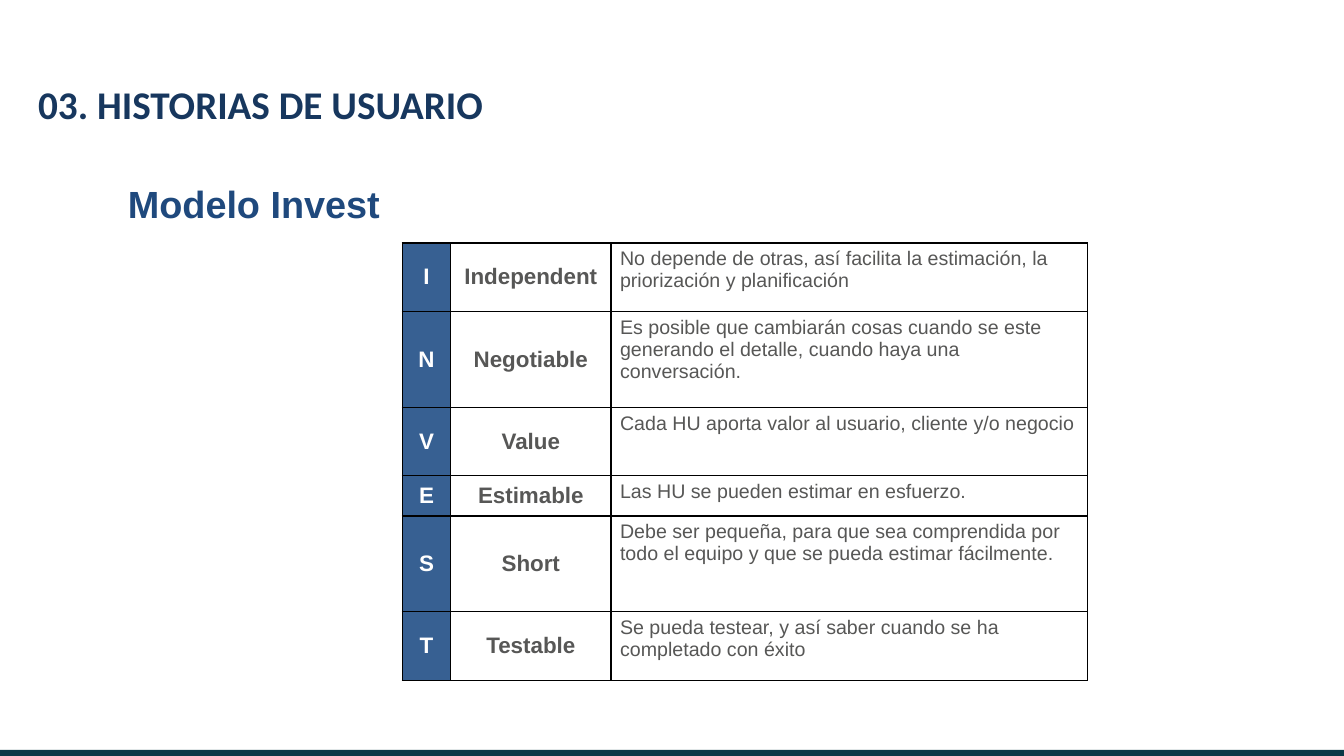
from pptx import Presentation
from pptx.dml.color import RGBColor
from pptx.enum.shapes import MSO_SHAPE
from pptx.enum.text import MSO_ANCHOR as ANCHOR, PP_ALIGN as ALIGN
from pptx.oxml import parse_xml
from pptx.oxml.ns import nsdecls
from pptx.util import Inches, Pt

TEAL = RGBColor(0x09, 0x38, 0x46)
NAVY = RGBColor(0x17, 0x37, 0x5E)
BLUE = RGBColor(0x1F, 0x49, 0x7D)
CELL_BLUE = RGBColor(0x37, 0x60, 0x92)
GRAY = RGBColor(0x57, 0x57, 0x56)
WHITE = RGBColor(0xFF, 0xFF, 0xFF)

INVEST = [
    ("Independent", 0.68, "No depende de otras, así facilita la estimación, la priorización y planificación"),
    ("Negotiable", 0.95, "Es posible que cambiarán cosas cuando se este generando el detalle, "
                         "cuando haya una conversación."),
    ("Value", 0.68, "Cada HU aporta valor al usuario, cliente y/o negocio"),
    ("Estimable", 0.4, "Las HU se pueden estimar en esfuerzo."),
    ("Short", 0.95, "Debe ser pequeña, para que sea comprendida por todo el equipo "
                    "y que se pueda estimar fácilmente."),
    ("Testable", 0.68, "Se pueda testear, y así saber cuando se ha completado con éxito"),
]
COL_WIDTHS = [0.48, 1.59, 4.73]


def write(tf, text, size=16, color=GRAY, bold=True, font="Arial", align=ALIGN.LEFT, spacing=None):
    tf.word_wrap = True
    p = tf.paragraphs[0]
    p.alignment = align
    if spacing:
        p.line_spacing = spacing
    r = p.add_run()
    r.text = text
    r.font.name = font
    r.font.size = Pt(size)
    r.font.bold = bold
    r.font.color.rgb = color


prs = Presentation()
prs.slide_width = Inches(13.33)
prs.slide_height = Inches(7.5)
s = prs.slides.add_slide(prs.slide_layouts[6])

bar = s.shapes.add_shape(MSO_SHAPE.RECTANGLE, 0, Inches(7.44), prs.slide_width, Inches(0.06))
bar.shadow.inherit = False
bar.fill.solid()
bar.fill.fore_color.rgb = TEAL
bar.line.fill.background()

frame = s.shapes.add_table(len(INVEST), len(COL_WIDTHS), Inches(3.99), Inches(2.41),
                           Inches(6.8), Inches(4.34))
table = frame.table
table.first_row = False
table.horz_banding = False
for col, width in zip(table.columns, COL_WIDTHS):
    col.width = Inches(width)

for row, (name, height, meaning) in zip(table.rows, INVEST):
    row.height = Inches(height)
    letter_cell, name_cell, meaning_cell = row.cells
    write(letter_cell.text_frame, name[0], color=WHITE, align=ALIGN.CENTER)
    write(name_cell.text_frame, name, align=ALIGN.CENTER)
    write(meaning_cell.text_frame, meaning, size=14, bold=False)
    letter_cell.vertical_anchor = name_cell.vertical_anchor = ANCHOR.MIDDLE
    for cell in row.cells:
        cell.margin_left = cell.margin_right = Inches(0.09)
        cell.margin_top = cell.margin_bottom = Inches(0.05)
        tcPr = cell._tc.get_or_add_tcPr()
        for side in ("lnL", "lnR", "lnT", "lnB"):
            tcPr.append(parse_xml(
                f'<a:{side} {nsdecls("a")} w="12700"><a:solidFill>'
                f'<a:srgbClr val="000000"/></a:solidFill></a:{side}>'))
        cell.fill.background()
    letter_cell.fill.solid()
    letter_cell.fill.fore_color.rgb = CELL_BLUE

subtitle = s.shapes.add_textbox(Inches(1.17), Inches(1.71), Inches(10.64), Inches(0.59))
subtitle.text_frame.vertical_anchor = ANCHOR.BOTTOM
write(subtitle.text_frame, "Modelo Invest", size=27, color=BLUE, spacing=0.9)

title = s.shapes.add_textbox(Inches(0.28), Inches(0.51), Inches(12.52), Inches(0.73))
write(title.text_frame, "03. HISTORIAS DE USUARIO", size=28, color=NAVY, font="Calibri",
      align=ALIGN.JUSTIFY, spacing=1.5)

prs.save("out.pptx")
